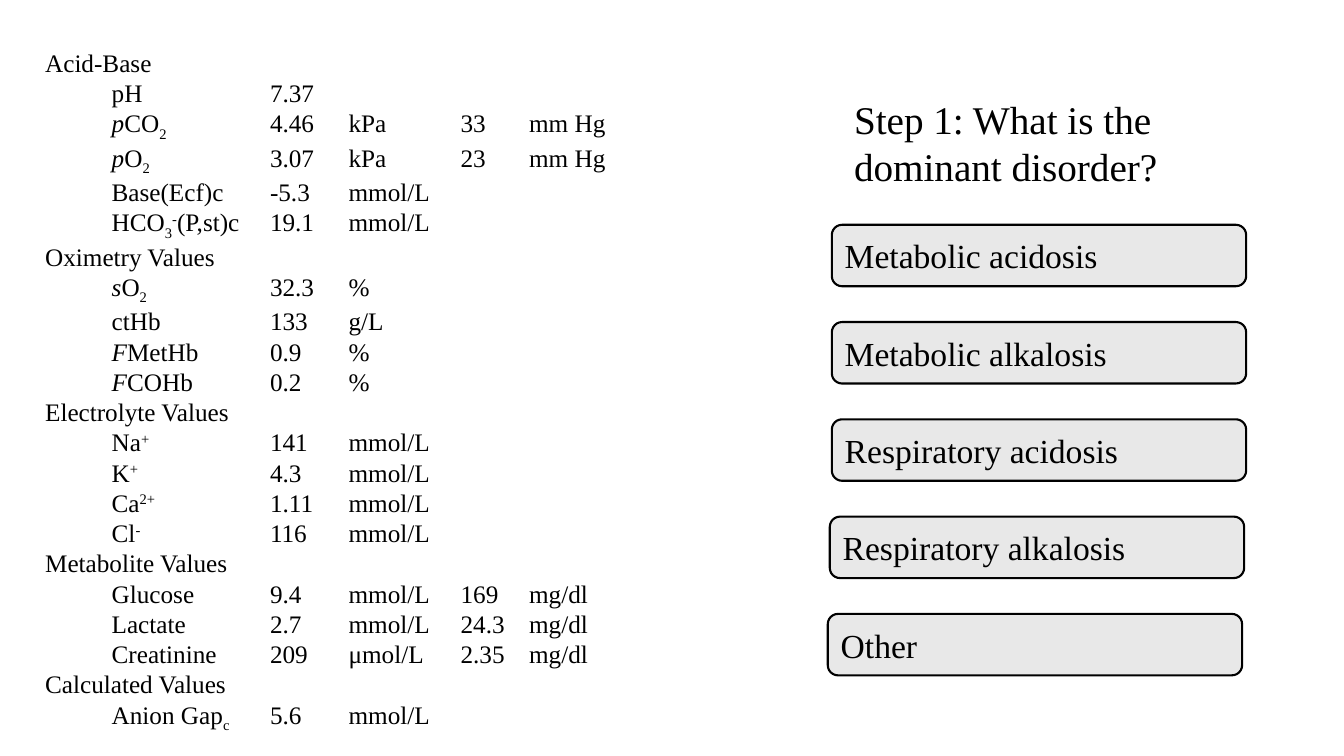
from lxml import etree
from pptx import Presentation
from pptx.dml.color import RGBColor
from pptx.enum.shapes import MSO_SHAPE
from pptx.enum.text import MSO_ANCHOR, MSO_AUTO_SIZE, PP_ALIGN
from pptx.oxml.ns import qn
from pptx.util import Inches, Pt

ROUNDED = MSO_SHAPE.ROUNDED_RECTANGLE
MIDDLE = MSO_ANCHOR.MIDDLE
LEFT = PP_ALIGN.LEFT
GROW = MSO_AUTO_SIZE.SHAPE_TO_FIT_TEXT

COLORS = {"text": "000000", "button": "E8E8E8", "outline": "000000"}
FONT = "Times New Roman"
TAB_STOPS = [0.23, 0.66, 2.23, 3.01, 4.12, 4.8]
BASELINES = {"sub": "-25000", "super": "30000"}

PANELS = {
    "Acid-Base": [
        ([("pH", "")], ["7.37"]),
        ([("p", "italic"), ("CO", ""), ("2", "sub")], ["4.46", "kPa", "33", "mm Hg"]),
        ([("p", "italic"), ("O", ""), ("2", "sub")], ["3.07", "kPa", "23", "mm Hg"]),
        ([("Base(Ecf)c", "")], ["-5.3", "mmol/L"]),
        ([("HCO", ""), ("3", "sub"), ("-", "super"), ("(P,st)c", "")], ["19.1", "mmol/L"]),
    ],
    "Oximetry Values": [
        ([("s", "italic"), ("O", ""), ("2", "sub")], ["32.3", "%"]),
        ([("ctHb", "")], ["133", "g/L"]),
        ([("F", "italic"), ("MetHb", "")], ["0.9", "%"]),
        ([("F", "italic"), ("COHb", "")], ["0.2", "%"]),
    ],
    "Electrolyte Values": [
        ([("Na", ""), ("+", "super")], ["141", "mmol/L"]),
        ([("K", ""), ("+", "super")], ["4.3", "mmol/L"]),
        ([("Ca", ""), ("2+", "super")], ["1.11", "mmol/L"]),
        ([("Cl", ""), ("-", "super")], ["116", "mmol/L"]),
    ],
    "Metabolite Values": [
        ([("Glucose", "")], ["9.4", "mmol/L", "169", "mg/dl"]),
        ([("Lactate", "")], ["2.7", "mmol/L", "24.3", "mg/dl"]),
        ([("Creatinine", "")], ["209", "μmol/L", "2.35", "mg/dl"]),
    ],
    "Calculated Values": [
        ([("Anion Gap", ""), ("c", "sub")], ["5.6", "mmol/L"]),
    ],
}

ANSWERS = [
    ("Metabolic acidosis", 8.25),
    ("Metabolic alkalosis", 8.25),
    ("Respiratory acidosis", 8.25),
    ("Respiratory alkalosis", 8.23),
    ("Other", 8.21),
]


def style_text(span, size):
    span.font.name = FONT
    span.font.size = Pt(size)
    span.font.color.rgb = RGBColor.from_string(COLORS["text"])


deck = Presentation()
deck.slide_width = Inches(13.33)
deck.slide_height = Inches(7.5)
page = deck.slides.add_slide(deck.slide_layouts[5])

question = page.shapes.title
question.left, question.top = Inches(8.37), Inches(0.89)
question.width, question.height = Inches(4.23), Inches(1.04)
question.text_frame.text = "Step 1: What is the dominant disorder?"
question.text_frame.word_wrap = True
question.text_frame.auto_size = GROW
question.text_frame.vertical_anchor = MIDDLE
question.text_frame.paragraphs[0].alignment = LEFT
style_text(question.text_frame.paragraphs[0].runs[0], 28)

for index, (answer, left) in enumerate(ANSWERS):
    button = page.shapes.add_shape(
        ROUNDED, Inches(left), Inches(2.23 + 0.965 * index), Inches(4.11), Inches(0.61)
    )
    button.shadow.inherit = False
    button.fill.solid()
    button.fill.fore_color.rgb = RGBColor.from_string(COLORS["button"])
    button.line.color.rgb = RGBColor.from_string(COLORS["outline"])
    button.line.width = Pt(1.5)
    button.text_frame.text = answer
    button.text_frame.vertical_anchor = MIDDLE
    button.text_frame.paragraphs[0].alignment = LEFT
    style_text(button.text_frame.paragraphs[0].runs[0], 24)

rows = []
for heading, measurements in PANELS.items():
    rows.append([(heading, "")])
    for name, values in measurements:
        rows.append([("\t\t", ""), *name, ("\t" + "\t".join(values), "")])

results = page.shapes.add_textbox(Inches(0.35), Inches(0.42), Inches(6.23), Inches(6.77))
frame = results.text_frame
frame.word_wrap = True
frame.auto_size = GROW
for index, row in enumerate(rows):
    para = frame.add_paragraph() if index else frame.paragraphs[0]
    tab_list = etree.SubElement(para._p.get_or_add_pPr(), qn("a:tabLst"))
    for stop in TAB_STOPS:
        etree.SubElement(tab_list, qn("a:tab"), pos=str(Inches(stop)), algn="l")
    for text, style in row:
        span = para.add_run()
        span.text = text
        style_text(span, 18)
        if style == "italic":
            span.font.italic = True
        elif style:
            span.font._element.set("baseline", BASELINES[style])

deck.save("out.pptx")
